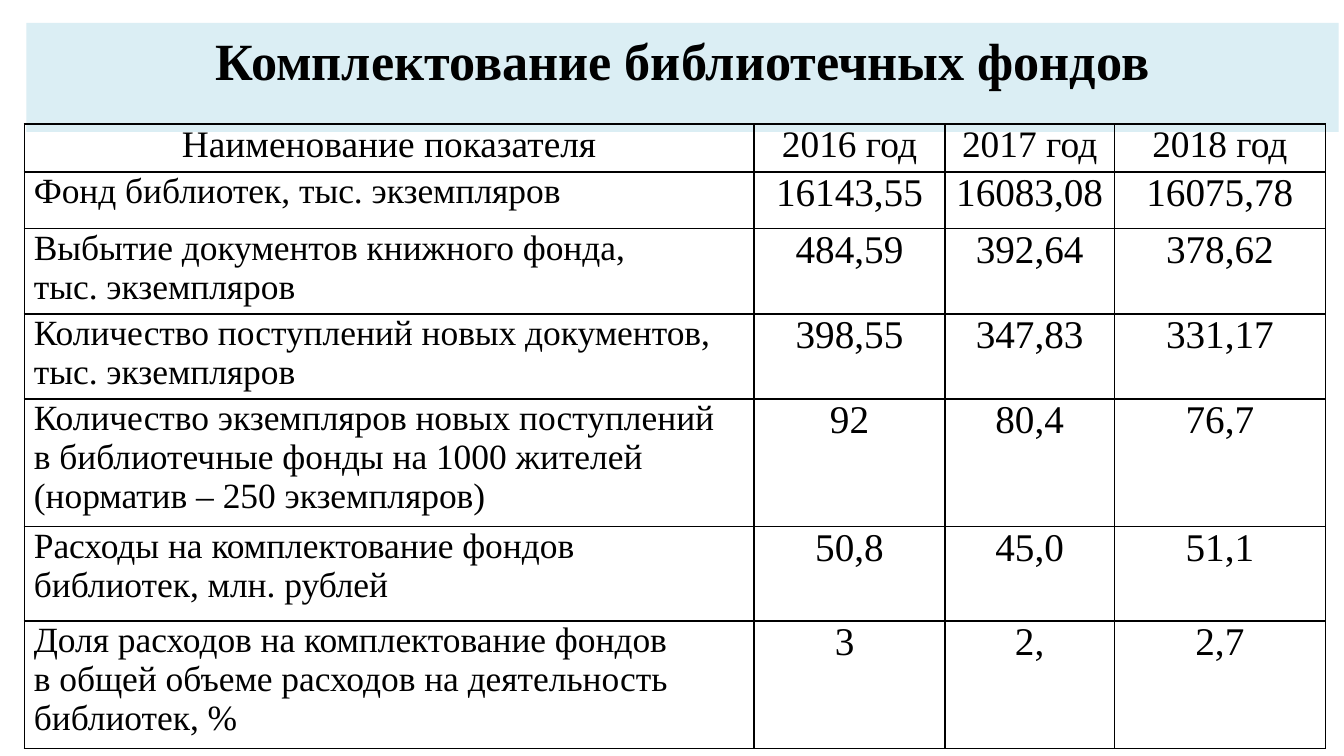
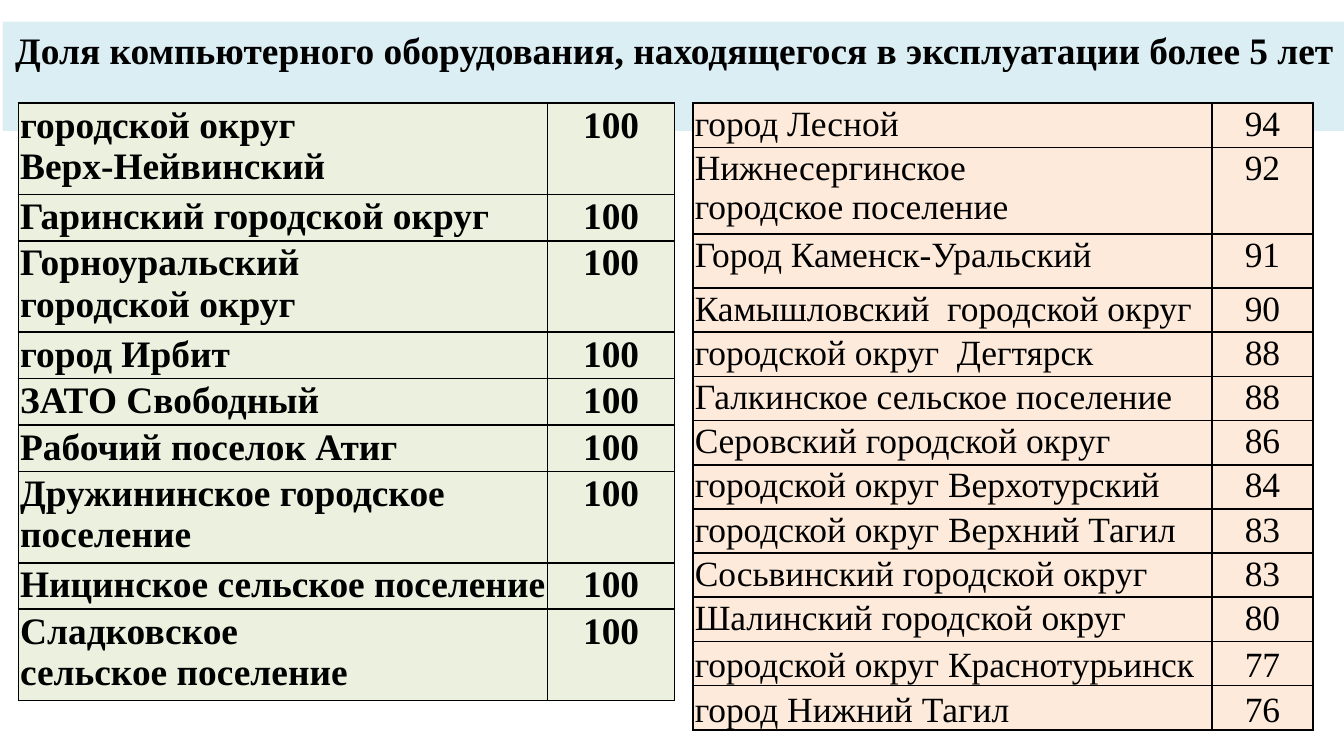
from dataclasses import dataclass
from typing import Optional

from lxml.etree import SubElement
from pptx import Presentation
from pptx.dml.color import RGBColor
from pptx.enum.text import MSO_ANCHOR, MSO_AUTO_SIZE, PP_ALIGN
from pptx.oxml.ns import qn
from pptx.slide import Slide
from pptx.util import Cm, Pt

COLOURS = {
    "text": "000000",
    "border": "000000",
    "band": "DBEEF4",
    "green": "EBF1DE",
    "peach": "FDEADA",
}
FONT = "Times New Roman"
TITLE_ONLY = 5


@dataclass
class TitleBand:
    text: str
    left: float
    top: float
    width: float
    height: float
    size: int


@dataclass
class Row:
    values: tuple[str, ...]
    height: float
    anchor: MSO_ANCHOR = MSO_ANCHOR.TOP


@dataclass
class TableSpec:
    left: float
    top: float
    columns: tuple[float, ...]
    rows: list[Row]
    label_size: int
    value_size: int
    side_margin: float
    top_margin: float = 0
    fill: Optional[str] = None
    bold: bool = False
    header_size: Optional[int] = None


def colour(name: str) -> RGBColor:
    return RGBColor.from_string(COLOURS[name])


def format_paragraph(para, size: int, bold: bool, centred: bool) -> None:
    para.alignment = PP_ALIGN.CENTER if centred else PP_ALIGN.LEFT
    for span in para.runs:
        span.font.name = FONT
        span.font.size = Pt(size)
        span.font.bold = bold
        span.font.color.rgb = colour("text")


def add_title(page: Slide, band: TitleBand) -> None:
    box = page.shapes.title
    box.left, box.top = Cm(band.left), Cm(band.top)
    box.width, box.height = Cm(band.width), Cm(band.height)
    box.fill.solid()
    box.fill.fore_color.rgb = colour("band")
    frame = box.text_frame
    frame.text = band.text
    frame.word_wrap = True
    frame.auto_size = MSO_AUTO_SIZE.SHAPE_TO_FIT_TEXT
    frame.vertical_anchor = MSO_ANCHOR.TOP
    frame.margin_left = frame.margin_right = Cm(0.18)
    frame.margin_top = frame.margin_bottom = Cm(0.1)
    format_paragraph(frame.paragraphs[0], band.size, True, True)


def add_borders(cell) -> None:
    properties = cell._tc.get_or_add_tcPr()
    for position, side in enumerate(("lnL", "lnR", "lnT", "lnB")):
        line = SubElement(properties, qn(f"a:{side}"), w=str(Pt(1)))
        solid = SubElement(line, qn("a:solidFill"))
        SubElement(solid, qn("a:srgbClr"), val=COLOURS["border"])
        # Border lines come before the cell fill
        properties.insert(position, line)


def format_cell(cell, spec: TableSpec, row: Row, text: str, size: int, centred: bool) -> None:
    cell.text_frame.text = text
    cell.vertical_anchor = row.anchor
    cell.margin_left = cell.margin_right = Cm(spec.side_margin)
    cell.margin_top, cell.margin_bottom = Cm(spec.top_margin), 0
    if spec.fill:
        cell.fill.solid()
        cell.fill.fore_color.rgb = colour(spec.fill)
    else:
        cell.fill.background()
    add_borders(cell)
    for para in cell.text_frame.paragraphs:
        format_paragraph(para, size, spec.bold, centred)


def add_table(page: Slide, spec: TableSpec) -> None:
    table = page.shapes.add_table(
        len(spec.rows), len(spec.columns), Cm(spec.left), Cm(spec.top),
        Cm(sum(spec.columns)), Cm(sum(row.height for row in spec.rows)),
    ).table
    table.first_row = table.horz_banding = False
    for column, width in zip(table.columns, spec.columns):
        column.width = Cm(width)
    for row_index, row in enumerate(spec.rows):
        table.rows[row_index].height = Cm(row.height)
        is_header = row_index == 0 and spec.header_size is not None
        for column_index, text in enumerate(row.values):
            is_value = column_index > 0
            size = spec.value_size if is_value else spec.label_size
            format_cell(table.cell(row_index, column_index), spec, row, text,
                        spec.header_size if is_header else size, is_value or is_header)


def district_rows(entries: list[tuple[str, str]], single: float, double: float) -> list[Row]:
    """Give two-line names the taller row height."""
    return [Row(entry, double if "\v" in entry[0] else single) for entry in entries]


# Slide 1: library stock
STOCK_TITLE = TitleBand("Комплектование библиотечных фондов", 0.5, 0.43, 24.8, 1.4, 28)
STOCK = TableSpec(
    left=0.46, top=2.34, columns=(13.79, 3.61, 3.2, 3.99),
    label_size=19, value_size=21, header_size=20, side_margin=0.18,
    rows=[
        Row(("Наименование показателя", "2016 год", "2017 год", "2018 год"), 0.91),
        Row(("Фонд библиотек, тыс. экземпляров", "16143,55", "16083,08", "16075,78"), 1.07),
        Row(("Выбытие документов книжного фонда, \vтыс. экземпляров",
             "484,59", "392,64", "378,62"), 1.61),
        Row(("Количество поступлений новых документов, тыс. экземпляров",
             "398,55", "347,83", "331,17"), 1.61),
        Row(("Количество экземпляров новых поступлений \vв библиотечные фонды "
             "на 1000 жителей (норматив – 250 экземпляров)", "92", "80,4", "76,7"), 2.41),
        Row(("Расходы на комплектование фондов библиотек, млн. рублей",
             "50,8", "45,0", "51,1"), 1.78),
        Row(("Доля расходов на комплектование фондов \vв общей объеме расходов "
             "на деятельность библиотек, %", "3 ", "2,", "2,7"), 2.41),
    ],
)

# Slide 2: share of old computer equipment
EQUIPMENT_TITLE = TitleBand(
    "Доля компьютерного оборудования, находящегося в эксплуатации более 5 лет",
    0.05, 0.41, 25.4, 1.04, 20)
FULL_SHARE_NAMES = [
    "городской округ \vВерх-Нейвинский",
    "Гаринский городской округ",
    "Горноуральский \vгородской округ",
    "город Ирбит",
    "ЗАТО Свободный",
    "Рабочий поселок Атиг",
    "Дружининское городское поселение",
    "Ницинское сельское поселение",
    "Сладковское \vсельское поселение",
]
FULL_SHARE = TableSpec(
    left=0.35, top=1.95, columns=(10, 2.4), label_size=20, value_size=20,
    side_margin=0.03, top_margin=0.03, fill="green", bold=True,
    rows=district_rows([(name, "100") for name in FULL_SHARE_NAMES], 0.87, 1.72),
)
FULL_SHARE.rows[6].height = 1.72  # this name wraps by itself

HIGH_SHARE = TableSpec(
    left=13.1, top=1.95, columns=(9.81, 1.9), label_size=19, value_size=19,
    side_margin=0.03, top_margin=0.03, fill="peach",
    rows=district_rows([
        ("город Лесной", "94"),
        ("Нижнесергинское \vгородское поселение", "92"),
        ("Город Каменск-Уральский", "91"),
        ("Камышловский  городской округ", "90"),
        ("городской округ  Дегтярск", "88"),
        ("Галкинское сельское поселение", "88"),
        ("Серовский городской округ", "86"),
        ("городской округ Верхотурский", "84"),
        ("городской округ Верхний Тагил", "83"),
        ("Сосьвинский городской округ", "83"),
        ("Шалинский городской округ", "80"),
        ("городской округ Краснотурьинск", "77"),
        ("город Нижний Тагил", "76"),
    ], 0.83, 1.63),
)
HIGH_SHARE.rows[2].height = 1.02
for last_row in HIGH_SHARE.rows[-2:]:
    last_row.anchor = MSO_ANCHOR.BOTTOM


def main() -> None:
    deck = Presentation()
    deck.slide_width, deck.slide_height = Cm(25.4), Cm(14.29)
    for band, tables in ((STOCK_TITLE, [STOCK]), (EQUIPMENT_TITLE, [FULL_SHARE, HIGH_SHARE])):
        page = deck.slides.add_slide(deck.slide_layouts[TITLE_ONLY])
        add_title(page, band)
        for spec in tables:
            add_table(page, spec)
    deck.save("out.pptx")


if __name__ == "__main__":
    main()
